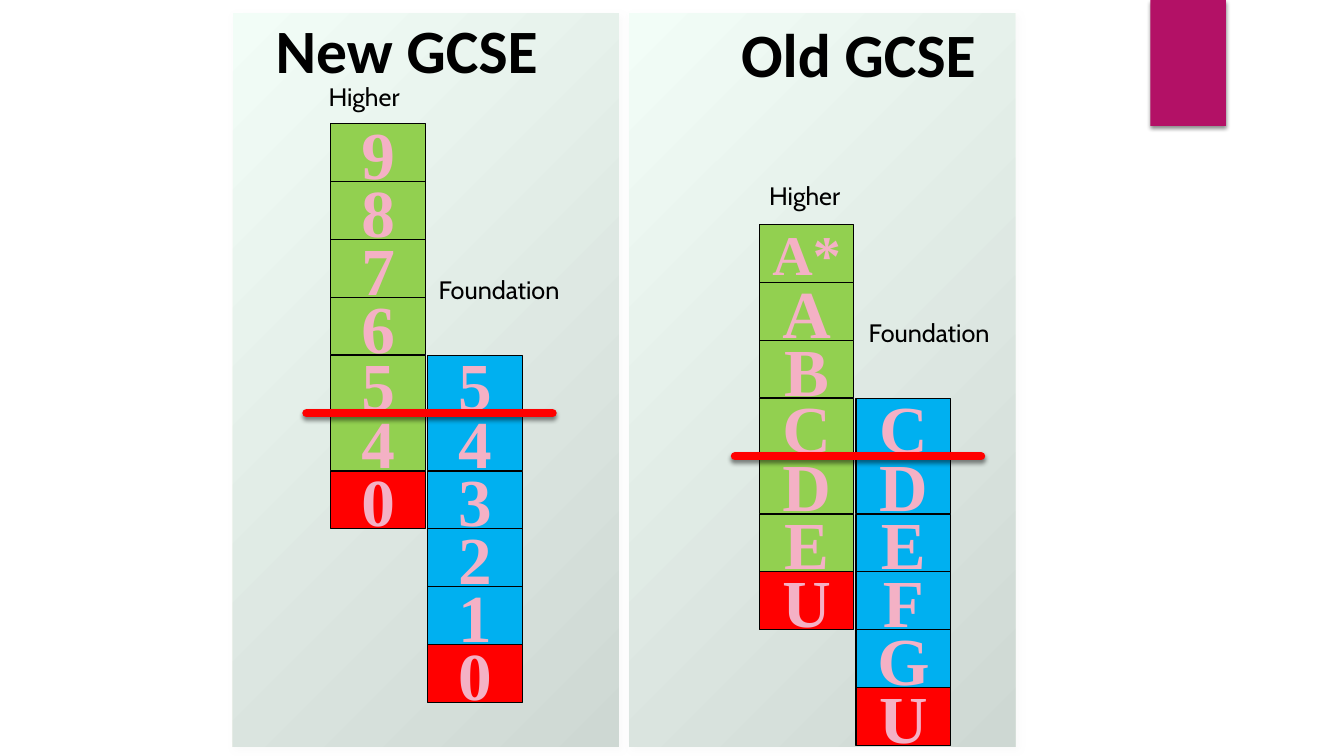
"""Build a slide that sets the new GCSE grades beside the old ones."""
from dataclasses import dataclass

from lxml import etree
from pptx import Presentation
from pptx.dml.color import RGBColor
from pptx.enum.shapes import MSO_CONNECTOR, MSO_SHAPE
from pptx.enum.text import MSO_ANCHOR, MSO_AUTO_SIZE, PP_ALIGN
from pptx.oxml.ns import qn
from pptx.util import Inches, Pt

RECT = MSO_SHAPE.RECTANGLE
LINE = MSO_CONNECTOR.STRAIGHT
MID, TOP = MSO_ANCHOR.MIDDLE, MSO_ANCHOR.TOP
LEFT, MIDST = PP_ALIGN.LEFT, PP_ALIGN.CENTER
GROW = MSO_AUTO_SIZE.SHAPE_TO_FIT_TEXT

WIDE, HIGH = 13.33, 7.5
COL, ROW = 0.96, 2.87 / 5
CELL = (0.94, 0.57)
PANEL = (3.83, 7.28)
COLORS = {
    "accent": "B31166", "pale": "F2FDF7", "deep": "CED8D3", "haze": "EBEBEB",
    "green": "92D050", "blue": "00B0F0", "red": "FF0000",
    "pink": "F4B1C5", "rim": "E33D6F", "black": "000000",
}


@dataclass
class Shade:
    color: str
    alpha: int
    blur: float
    dist: float
    angle: int


@dataclass
class Font:
    name: str
    size: int
    color: str = "black"
    bold: bool = False
    rim: bool = False


@dataclass
class Label:
    text: str
    x: float
    y: float
    w: float
    h: float
    font: Font
    align: PP_ALIGN = MIDST
    grow: bool = True


@dataclass
class Tier:
    grades: list[str]
    color: str
    col: int
    row: int


@dataclass
class Exam:
    panel: float
    x: float
    y: float
    tiers: list[Tier]
    bar: int
    labels: list[Label]


DARK = Shade("black", 45, 3, 2, 90)
SOFT = Shade("haze", 30, 5, 3, 45)
HEAD = Font("Calibri", 44, bold=True)
NOTE = Font("Cabin", 18)

EXAMS = [
    Exam(6.24, 7.53, 2.23, [
        Tier(["A*", "A", "B", "C", "D", "E", "U"], "green", 0, 0),
        Tier(["C", "D", "E", "F", "G", "U"], "blue", 1, 3),
    ], 4, [
        Label("Higher", 7.53, 1.74, 1.18, 0.4, NOTE, LEFT),
        Label("Foundation", 8.37, 3.1, 1.69, 0.4, NOTE),
        Label("Old GCSE", 6.89, -0.2, 3.25, 1.45, HEAD, grow=False),
    ]),
    Exam(2.31, 3.28, 1.23, [
        Tier(["9", "8", "7", "6", "5", "4", "0"], "green", 0, 0),
        Tier(["5", "4", "3", "2", "1", "0"], "blue", 1, 4),
    ], 5, [
        Label("Higher", 3.16, 0.76, 1.18, 0.4, NOTE, LEFT),
        Label("Foundation", 4.17, 2.67, 1.56, 0.4, NOTE),
        Label("New GCSE", 2.41, -0.24, 3.25, 1.45, HEAD, grow=False),
    ]),
]


def rgb(name: str) -> RGBColor:
    return RGBColor.from_string(COLORS[name])


def add_hue(node, name: str):
    return etree.SubElement(node, qn("a:srgbClr"), val=COLORS[name])


def cast(shape, shade: Shade) -> None:
    props = shape._element.spPr
    for old in props.findall(qn("a:effectLst")):
        props.remove(old)
    group = etree.SubElement(props, qn("a:effectLst"))
    drop = etree.SubElement(
        group, qn("a:outerShdw"), blurRad=str(Pt(shade.blur)),
        dist=str(Pt(shade.dist)), dir=str(shade.angle * 60000), rotWithShape="0")
    hue = add_hue(drop, shade.color)
    etree.SubElement(hue, qn("a:alpha"), val=str(shade.alpha * 1000))


def write(frame, text: str, font: Font, align: PP_ALIGN, anchor: MSO_ANCHOR) -> None:
    frame.word_wrap = True
    frame.vertical_anchor = anchor
    para = frame.paragraphs[0]
    para.alignment = align
    run = para.add_run()
    run.text = text
    run.font.name = font.name
    run.font.size = Pt(font.size)
    run.font.bold = font.bold
    run.font.color.rgb = rgb(font.color)
    if font.rim:
        edge = etree.Element(qn("a:ln"), w=str(Pt(1.75)))
        add_hue(etree.SubElement(edge, qn("a:solidFill")), "rim")
        run.font._element.insert(0, edge)


def add_box(slide, x: float, y: float, w: float, h: float):
    box = slide.shapes.add_shape(RECT, Inches(x), Inches(y), Inches(w), Inches(h))
    box.shadow.inherit = False
    box.line.fill.background()
    return box


def add_panel(slide, x: float) -> None:
    box = add_box(slide, x, 0.13, *PANEL)
    box.fill.gradient()
    box.fill.gradient_angle = 315
    for stop, name in zip(box.fill.gradient_stops, ("pale", "deep")):
        stop.color.rgb = rgb(name)
    cast(box, SOFT)


def add_tier(slide, exam: Exam, tier: Tier) -> None:
    last = len(tier.grades) - 1
    for step, grade in enumerate(tier.grades):
        box = add_box(slide, exam.x + tier.col * COL,
                      exam.y + (tier.row + step) * ROW, *CELL)
        box.fill.solid()
        box.fill.fore_color.rgb = rgb("red" if step == last else tier.color)
        box.line.color.rgb = rgb("black")
        box.line.width = Pt(0.75)
        size = 40 if len(grade) > 1 else 48
        font = Font("Times New Roman", size, "pink", True, True)
        write(box.text_frame, grade, font, MIDST, MID)


def add_bar(slide, exam: Exam) -> None:
    x, y = exam.x - COL / 4, Inches(exam.y + exam.bar * ROW)
    bar = slide.shapes.add_connector(LINE, Inches(x), y, Inches(x + 2.44), y)
    bar.line.color.rgb = rgb("red")
    bar.line.width = Pt(6)
    bar._element.spPr.find(qn("a:ln")).set("cap", "rnd")
    cast(bar, DARK)


def add_label(slide, item: Label) -> None:
    box = slide.shapes.add_textbox(
        Inches(item.x), Inches(item.y), Inches(item.w), Inches(item.h))
    write(box.text_frame, item.text, item.font, item.align, TOP if item.grow else MID)
    if item.grow:
        box.text_frame.auto_size = GROW


def main() -> None:
    deck = Presentation()
    deck.slide_width, deck.slide_height = Inches(WIDE), Inches(HIGH)
    slide = deck.slides.add_slide(deck.slide_layouts[6])
    tab = add_box(slide, 11.41, 0, 0.75, HIGH / 6)
    tab.fill.solid()
    tab.fill.fore_color.rgb = rgb("accent")
    cast(tab, DARK)
    for exam in EXAMS:
        add_panel(slide, exam.panel)
    for exam in EXAMS:
        for tier in exam.tiers:
            add_tier(slide, exam, tier)
        add_bar(slide, exam)
        for item in exam.labels:
            add_label(slide, item)
    deck.save("out.pptx")


if __name__ == "__main__":
    main()
